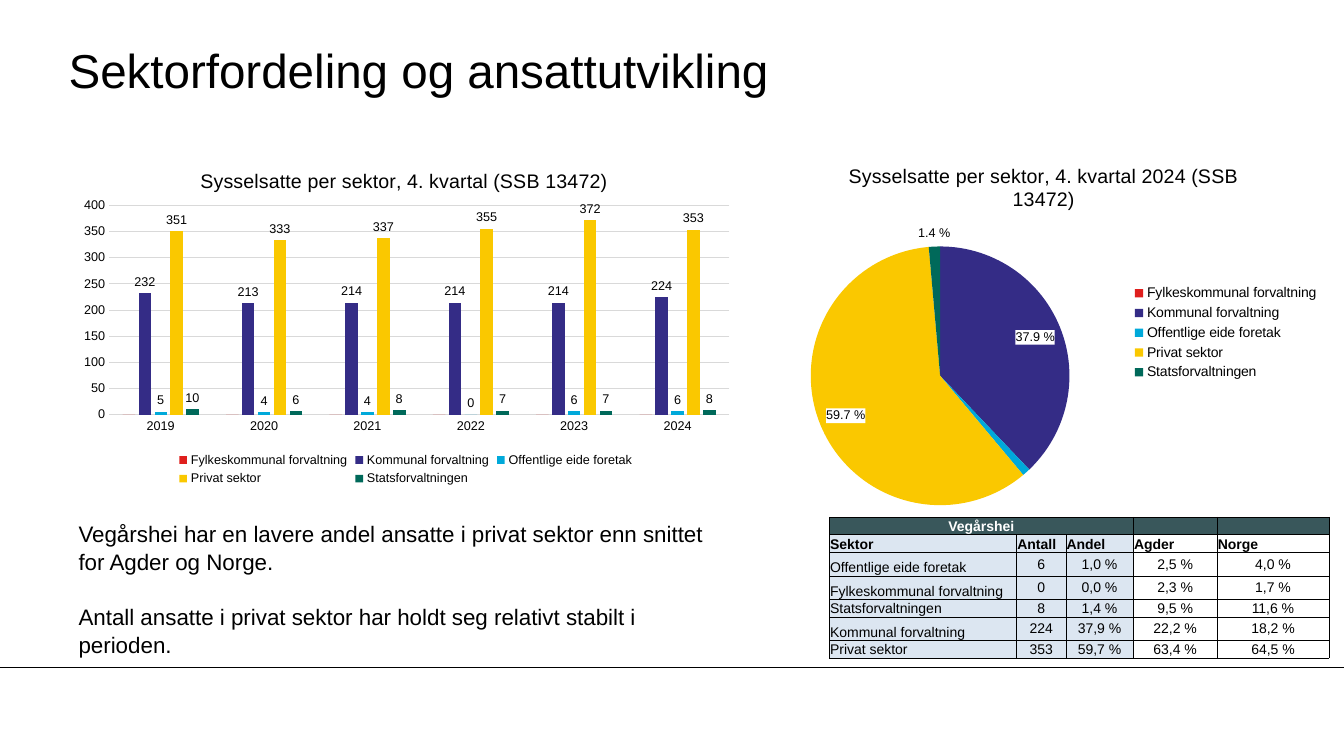
from dataclasses import dataclass

from lxml import etree
from pptx import Presentation
from pptx.chart import data as cd
from pptx.dml.color import RGBColor
from pptx.enum import chart as ec, shapes, text
from pptx.oxml import ns, parse_xml
from pptx.util import Cm, Pt

FONT = "Arial"
BLACK, WHITE, GRID = "000000", "FFFFFF", "D9D9D9"
HEADER_FILL, OWN_FILL = "39575B", "DCE6F1"


@dataclass
class Sector:
    name: str
    color: str
    employees: tuple
    share: float


@dataclass
class ChartBox:
    title: str
    frame: tuple        # left, top, width, height in cm
    title_at: tuple     # share of the chart: x, y
    plot_at: tuple      # share of the chart: x, y, width, height
    legend_side: object
    legend_size: int


@dataclass
class TableRow:
    cells: tuple
    height: float


SECTORS = [
    Sector("Fylkeskommunal forvaltning", "DF1F1D", (0, 0, 0, 0, 0, 0), 0),
    Sector("Kommunal forvaltning", "342C86", (232, 213, 214, 214, 214, 224), 37.9),
    Sector("Offentlige eide foretak", "00A9DA", (5, 4, 4, 0, 6, 6), 1),
    Sector("Privat sektor", "FAC800", (351, 333, 337, 355, 372, 353), 59.7),
    Sector("Statsforvaltningen", "00695A", (10, 6, 8, 7, 7, 8), 1.4),
]
YEARS = [str(year) for year in range(2019, 2025)]

HISTORY = ChartBox("Sysselsatte per sektor, 4. kvartal (SSB 13472)",
                   (1.73, 3.71, 16.99, 8.64), (0.19, 0.05), (0.06, 0.17, 0.92, 0.61),
                   ec.XL_LEGEND_POSITION.BOTTOM, 9)
SHARES = ChartBox("Sysselsatte per sektor, 4. kvartal 2024 (SSB 13472)",
                  (18.97, 3.66, 14.53, 9.45), (0.16, 0.04), (0.1, 0.27, 0.45, 0.69),
                  ec.XL_LEGEND_POSITION.RIGHT, 10)

ROWS = [
    TableRow(("Vegårshei", "", "", "", ""), 0.44),
    TableRow(("Sektor", "Antall", "Andel", "Agder", "Norge"), 0.44),
    TableRow(("Offentlige eide foretak", "6", "1,0 %", "2,5 %", "4,0 %"), 0.59),
    TableRow(("Fylkeskommunal forvaltning", "0", "0,0 %", "2,3 %", "1,7 %"), 0.59),
    TableRow(("Statsforvaltningen", "8", "1,4 %", "9,5 %", "11,6 %"), 0.44),
    TableRow(("Kommunal forvaltning", "224", "37,9 %", "22,2 %", "18,2 %"), 0.59),
    TableRow(("Privat sektor", "353", "59,7 %", "63,4 %", "64,5 %"), 0.44),
]
COLUMN_WIDTHS = (4.72, 1.24, 1.7, 2.11, 2.82)


def rgb(value: str) -> RGBColor:
    return RGBColor.from_string(value)


def style(font, size: float, color: str = BLACK, bold: bool = False) -> None:
    font.name, font.size, font.bold = FONT, Pt(size), bold
    font.color.rgb = rgb(color)


def paint(fill, color: str) -> None:
    fill.solid()
    fill.fore_color.rgb = rgb(color)


def set_layout(parent, index: int, fractions: tuple, inner: bool = False) -> None:
    for old in parent.findall(ns.qn("c:layout")):
        parent.remove(old)
    layout = etree.Element(ns.qn("c:layout"))
    manual = etree.SubElement(layout, ns.qn("c:manualLayout"))
    settings = [("layoutTarget", "inner")] if inner else []
    settings += [("xMode", "edge"), ("yMode", "edge"), *zip("xywh", fractions)]
    for tag, value in settings:
        etree.SubElement(manual, ns.qn(f"c:{tag}"), val=str(value))
    parent.insert(index, layout)


def add_sector_chart(slide, kind, box: ChartBox, values):
    chart = slide.shapes.add_chart(kind, *map(Cm, box.frame), values).chart
    style(chart.font, 10)
    chart.has_title = True
    heading = chart.chart_title
    heading.text_frame.text = box.title
    style(heading.text_frame.paragraphs[0].runs[0].font, 14)
    heading.include_in_layout = False
    set_layout(heading._element, 1, box.title_at)
    set_layout(chart._chartSpace.chart.plotArea, 0, box.plot_at, inner=True)
    chart.has_legend = True
    chart.legend.position = box.legend_side
    chart.legend.include_in_layout = False
    style(chart.legend.font, box.legend_size)
    return chart


def add_history(slide) -> None:
    values = cd.CategoryChartData()
    values.categories = YEARS
    for sector in SECTORS:
        values.add_series(sector.name, sector.employees)
    chart = add_sector_chart(slide, ec.XL_CHART_TYPE.COLUMN_CLUSTERED, HISTORY, values)
    plot = chart.plots[0]
    plot.vary_by_categories, plot.gap_width, plot.overlap = False, 219, -27
    for sector, series in zip(SECTORS, plot.series):
        paint(series.format.fill, sector.color)
        if any(sector.employees):
            labels = series.data_labels
            labels.show_value = True
            labels.number_format, labels.number_format_is_linked = "#,##0", False
            labels.position = ec.XL_LABEL_POSITION.OUTSIDE_END
            style(labels.font, 9)
    years, counts = chart.category_axis, chart.value_axis
    for axis in (years, counts):
        axis.major_tick_mark = axis.minor_tick_mark = ec.XL_TICK_MARK.NONE
        style(axis.tick_labels.font, 9)
    counts.minimum_scale, counts.maximum_scale, counts.major_unit = 0, 400, 50
    counts.tick_labels.number_format = "#,##0"
    counts.tick_labels.number_format_is_linked = False
    counts.format.line.fill.background()
    for line in (years.format.line, counts.major_gridlines.format.line):
        line.color.rgb, line.width = rgb(GRID), Pt(0.75)


def add_shares(slide) -> None:
    values = cd.CategoryChartData()
    values.categories = [sector.name for sector in SECTORS]
    values.add_series("Series 1", [sector.share for sector in SECTORS])
    chart = add_sector_chart(slide, ec.XL_CHART_TYPE.PIE, SHARES, values)
    series = chart.plots[0].series[0]
    for index, sector in enumerate(SECTORS):
        paint(series.points[index].format.fill, sector.color)
    labels = series.data_labels
    labels.show_value, labels.show_percentage = False, True
    labels.number_format, labels.number_format_is_linked = r"0.0\ %", False
    labels.position = ec.XL_LABEL_POSITION.INSIDE_END
    style(labels.font, 9)
    # White label boxes, no label on the smallest slices, the last one outside
    element = labels._element
    element.find(ns.qn("c:numFmt")).addnext(parse_xml(
        f'<c:spPr {ns.nsdecls("c", "a")}><a:solidFill><a:srgbClr val="{WHITE}"/>'
        '</a:solidFill></c:spPr>'))
    flags = "".join(f'<c:show{name} val="{int(name == "Percent")}"/>' for name in
                    ("LegendKey", "Val", "CatName", "SerName", "Percent", "BubbleSize"))
    outside = (r'<c:numFmt formatCode="0.0\ %" sourceLinked="0"/>'
               f'<c:dLblPos val="outEnd"/>{flags}')
    hidden = '<c:delete val="1"/>'
    for position, (index, body) in enumerate(((0, hidden), (2, hidden), (4, outside))):
        element.insert(position, parse_xml(
            f'<c:dLbl {ns.nsdecls("c")}><c:idx val="{index}"/>{body}</c:dLbl>'))


def fill_cell(cell, words: str, row: int, column: int) -> None:
    header, body = row == 0, row > 1
    cell.margin_left = cell.margin_right = cell.margin_top = Cm(0.02)
    cell.margin_bottom = 0
    numeric = body and column > 0
    cell.vertical_anchor = text.MSO_ANCHOR.MIDDLE if numeric else text.MSO_ANCHOR.BOTTOM
    paragraph = cell.text_frame.paragraphs[0]
    paragraph.text = words
    paragraph.alignment = text.PP_ALIGN.CENTER if numeric or header else text.PP_ALIGN.LEFT
    for run in paragraph.runs:
        style(run.font, 10, WHITE if header else BLACK, bold=not body)
    if not words:
        etree.SubElement(paragraph._p, ns.qn("a:endParaRPr"), sz="1000")
    for side in "LRTB":
        cell._tc.get_or_add_tcPr().append(parse_xml(
            f'<a:ln{side} {ns.nsdecls("a")} w="6350"><a:solidFill>'
            f'<a:srgbClr val="{BLACK}"/></a:solidFill></a:ln{side}>'))
    if header or column < 3:
        paint(cell.fill, HEADER_FILL if header else OWN_FILL)
    else:
        cell.fill.background()


def add_comparison(slide) -> None:
    table = slide.shapes.add_table(
        len(ROWS), len(COLUMN_WIDTHS), Cm(20.9), Cm(13.03),
        Cm(sum(COLUMN_WIDTHS)), Cm(sum(row.height for row in ROWS))).table
    for column, width in zip(table.columns, COLUMN_WIDTHS):
        column.width = Cm(width)
    for r, row in enumerate(ROWS):
        table.rows[r].height = Cm(row.height)
        for c, words in enumerate(row.cells):
            fill_cell(table.cell(r, c), words, r, c)
    table.cell(0, 0).merge(table.cell(0, 2))


def main() -> None:
    deck = Presentation()
    deck.slide_width, deck.slide_height = Cm(33.87), Cm(19.05)
    slide = deck.slides.add_slide(deck.slide_layouts[5])

    # Footer rule
    rule = slide.shapes.add_connector(shapes.MSO_CONNECTOR.STRAIGHT,
                                      0, Cm(16.81), deck.slide_width, Cm(16.81))
    rule.line.color.rgb, rule.line.width = rgb(BLACK), Pt(0.75)
    etree.SubElement(rule._element.spPr, ns.qn("a:effectLst"))

    # Heading
    heading = slide.shapes.title
    heading.left, heading.top, heading.width, heading.height = map(Cm, (1.73, 0.79, 28.19, 1.9))
    frame = heading.text_frame
    frame.text = "Sektorfordeling og ansattutvikling"
    frame.margin_left = frame.margin_right = frame.margin_top = frame.margin_bottom = 0
    frame.vertical_anchor, frame.auto_size = text.MSO_ANCHOR.MIDDLE, text.MSO_AUTO_SIZE.NONE
    frame.paragraphs[0].alignment = text.PP_ALIGN.LEFT
    style(frame.paragraphs[0].runs[0].font, 34)

    # Findings
    findings = slide.shapes.add_textbox(*map(Cm, (1.73, 12.95, 16.28, 3.68))).text_frame
    findings.word_wrap = True
    findings.text = ("Vegårshei har en lavere andel ansatte i privat sektor enn snittet "
                     "for Agder og Norge.\n"
                     "Antall ansatte i privat sektor har holdt seg relativt stabilt i perioden.")
    for paragraph in findings.paragraphs:
        paragraph.line_spacing = 1.05
        style(paragraph.runs[0].font, 16)
    findings.paragraphs[1].space_before = Pt(19)

    # Table and charts
    add_comparison(slide)
    add_history(slide)
    add_shares(slide)
    deck.save("out.pptx")


if __name__ == "__main__":
    main()
